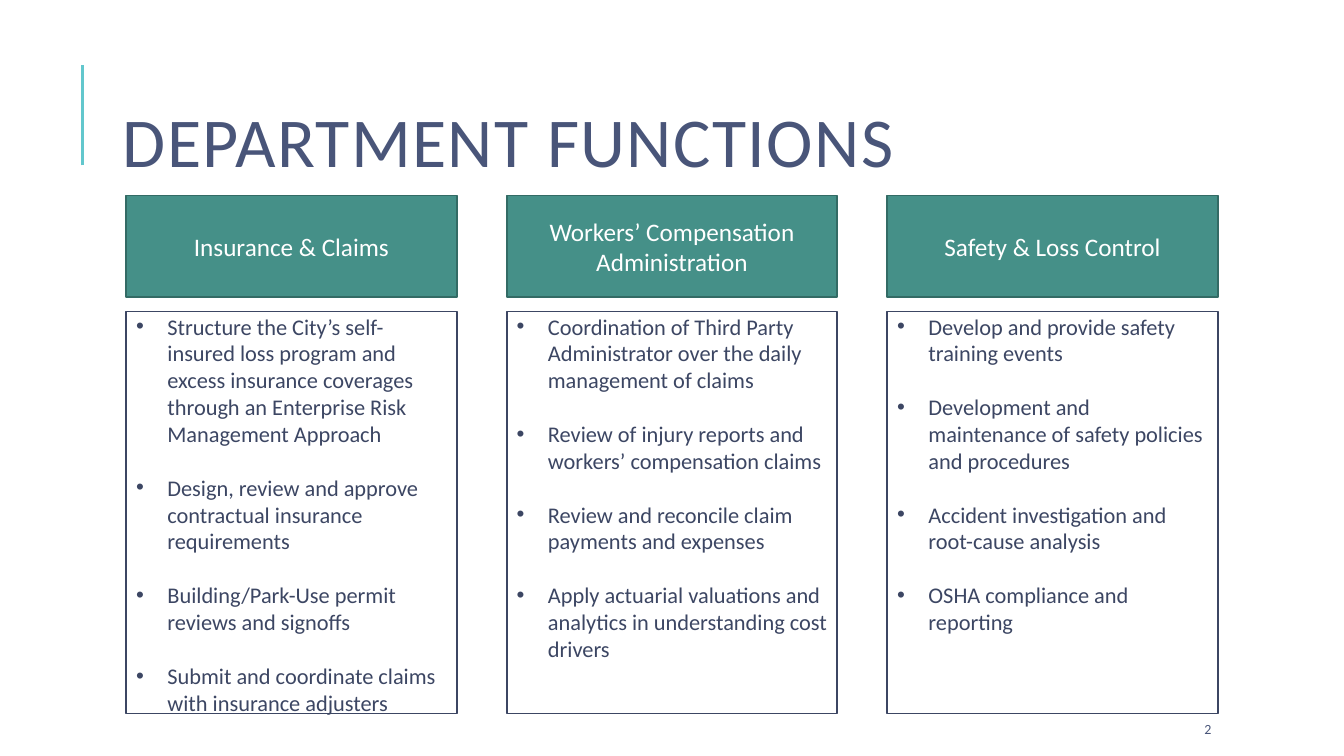
import pptx
import pptx.util
import pptx.dml.color
import pptx.enum.shapes
import pptx.enum.text
import pptx.oxml
import pptx.oxml.ns
import lxml.etree

Cm = pptx.util.Cm
Pt = pptx.util.Pt
Align = pptx.enum.text.PP_ALIGN
Anchor = pptx.enum.text.MSO_ANCHOR

COLUMNS = [
    ("Insurance & Claims", [
        "Structure the City’s self-insured loss program and excess insurance coverages "
        "through an Enterprise Risk Management Approach",
        "Design, review and approve contractual insurance requirements",
        "Building/Park-Use permit reviews and signoffs",
        "Submit and coordinate claims with insurance adjusters",
    ]),
    ("Workers’ Compensation Administration", [
        "Coordination of Third Party Administrator over the daily management of claims",
        "Review of injury reports and workers’ compensation claims",
        "Review and reconcile claim payments and expenses",
        "Apply actuarial valuations and analytics in understanding cost drivers",
    ]),
    ("Safety & Loss Control", [
        "Develop and provide safety training events",
        "Development and maintenance of safety policies and procedures",
        "Accident investigation and root-cause analysis",
        "OSHA compliance and reporting",
    ]),
]


def color(code):
    return pptx.dml.color.RGBColor.from_string(code)


def apply(target, values):
    for name, value in values.items():
        setattr(target, name, value)


def add_child(parent, tag, **attributes):
    child = lxml.etree.SubElement(parent, pptx.oxml.ns.qn(tag))
    for name, value in attributes.items():
        child.set(name, value)
    return child


class Page:
    font = "Calibri"
    title_color = "495579"
    body_color = "3C4663"
    header_fill = "459088"
    header_line = "336B65"
    accent = "62C7CD"

    def __init__(self, deck):
        self.slide = deck.slides.add_slide(deck.slide_layouts[5])

    def add_span(self, para, text, size, code):
        span = para.add_run()
        span.text = text
        apply(span.font, {"name": self.font, "size": Pt(size)})
        span.font.color.rgb = color(code)
        return span

    def title(self, text, left, top, width, height):
        box = self.slide.shapes.title
        apply(box, {"left": Cm(left), "top": Cm(top), "width": Cm(width), "height": Cm(height)})
        apply(box.text_frame, {"vertical_anchor": Anchor.MIDDLE, "word_wrap": True,
                               "auto_size": pptx.enum.text.MSO_AUTO_SIZE.NONE})
        para = box.text_frame.paragraphs[0]
        apply(para, {"alignment": Align.LEFT, "line_spacing": 0.8})
        span = self.add_span(para, text, 50, self.title_color)
        span.font._element.set("spc", "100")

    def line(self, left, top, bottom):
        line = self.slide.shapes.add_connector(
            pptx.enum.shapes.MSO_CONNECTOR.STRAIGHT, Cm(left), Cm(bottom), Cm(left), Cm(top))
        line.line.color.rgb = color(self.accent)
        line.line.width = Pt(1.5)
        add_child(line._element.spPr, "a:effectLst")

    def panel(self, left, top, width, height, fill, outline):
        box = self.slide.shapes.add_shape(
            pptx.enum.shapes.MSO_SHAPE.RECTANGLE, Cm(left), Cm(top), Cm(width), Cm(height))
        box.shadow.inherit = False
        box.fill.solid()
        box.fill.fore_color.rgb = color(fill)
        box.line.color.rgb = color(outline)
        box.line.width = Pt(1.25)
        box.text_frame.word_wrap = True
        return box.text_frame

    def header(self, text, left, top, width, height):
        frame = self.panel(left, top, width, height, self.header_fill, self.header_line)
        frame.vertical_anchor = Anchor.MIDDLE
        para = frame.paragraphs[0]
        para.alignment = Align.CENTER
        self.add_span(para, text, 18, "FFFFFF")

    def bullets(self, items, left, top, width, height):
        frame = self.panel(left, top, width, height, "FFFFFF", self.body_color)
        apply(frame, {"vertical_anchor": Anchor.TOP, "margin_top": Cm(0.03), "margin_bottom": 0})
        for index, item in enumerate(items):
            para = frame.add_paragraph() if index else frame.paragraphs[0]
            apply(para, {"alignment": Align.LEFT, "space_before": Pt(19.2 if index else 0)})
            properties = para._p.get_or_add_pPr()
            properties.set("marL", str(Cm(0.79)))
            properties.set("indent", str(-Cm(0.79)))
            add_child(properties, "a:buFont", typeface="Arial")
            add_child(properties, "a:buChar", char="•")
            self.add_span(para, item, 16, self.body_color)

    def number(self, text, left, top, width, height):
        box = self.slide.shapes.add_textbox(Cm(left), Cm(top), Cm(width), Cm(height))
        apply(box.text_frame, {"word_wrap": True, "vertical_anchor": Anchor.MIDDLE})
        self.add_span(box.text_frame.paragraphs[0], text, 10, self.title_color)


def main():
    deck = pptx.Presentation()
    apply(deck, {"slide_width": Cm(33.87), "slide_height": Cm(19.05)})
    page = Page(deck)
    page.line(2.08, 1.63, 4.17)
    page.title("DEPARTMENT FUNCTIONS", 2.84, 1.63, 27, 4.17)
    for index, (heading, items) in enumerate(COLUMNS):
        left = 3.18 + index * 9.59
        page.header(heading, left, 4.93, 8.33, 2.55)
        page.bullets(items, left, 7.85, 8.33, 10.13)
    page.number("2", 30.1, 17.98, 2.69, 0.76)
    deck.save("out.pptx")


if __name__ == "__main__":
    main()
